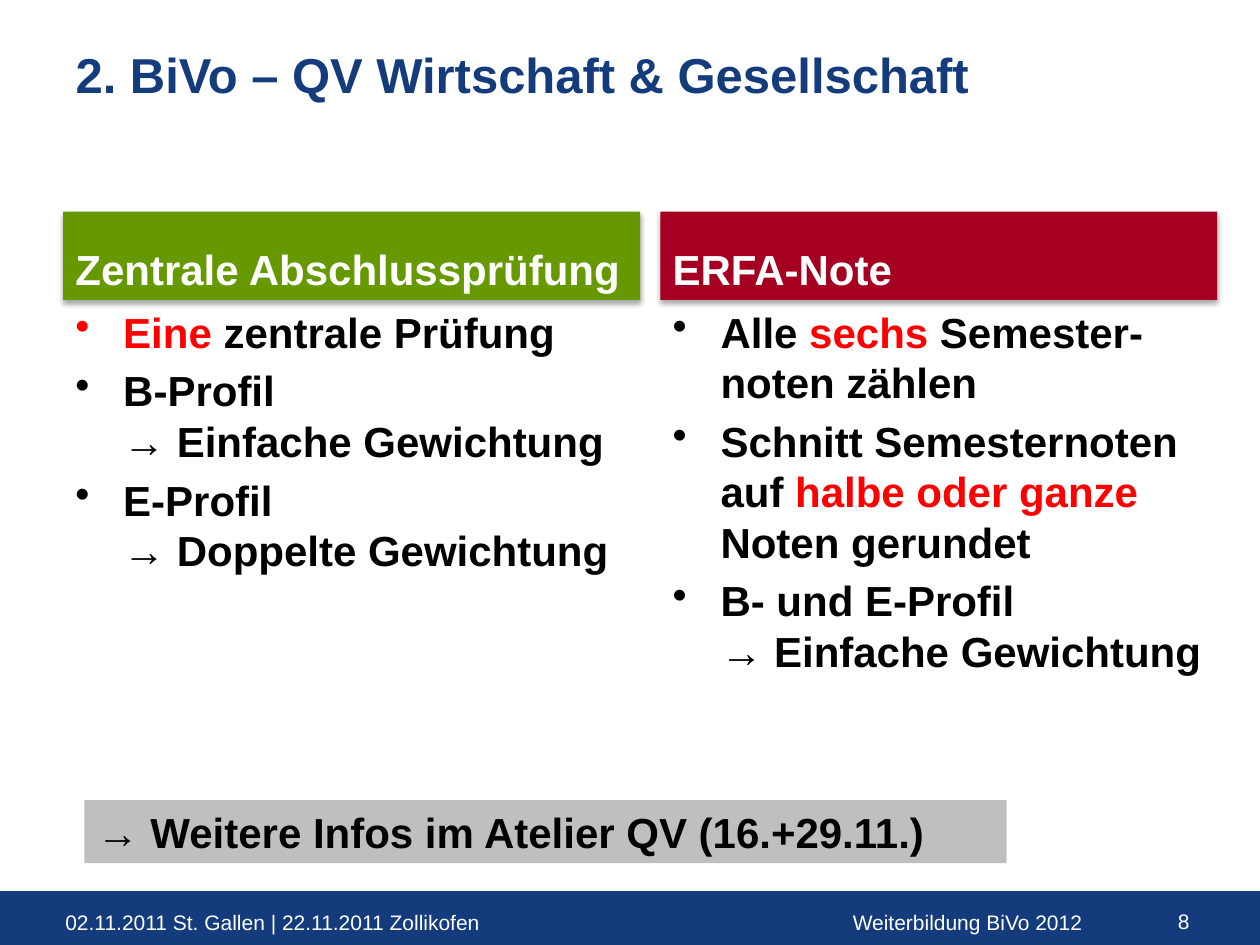
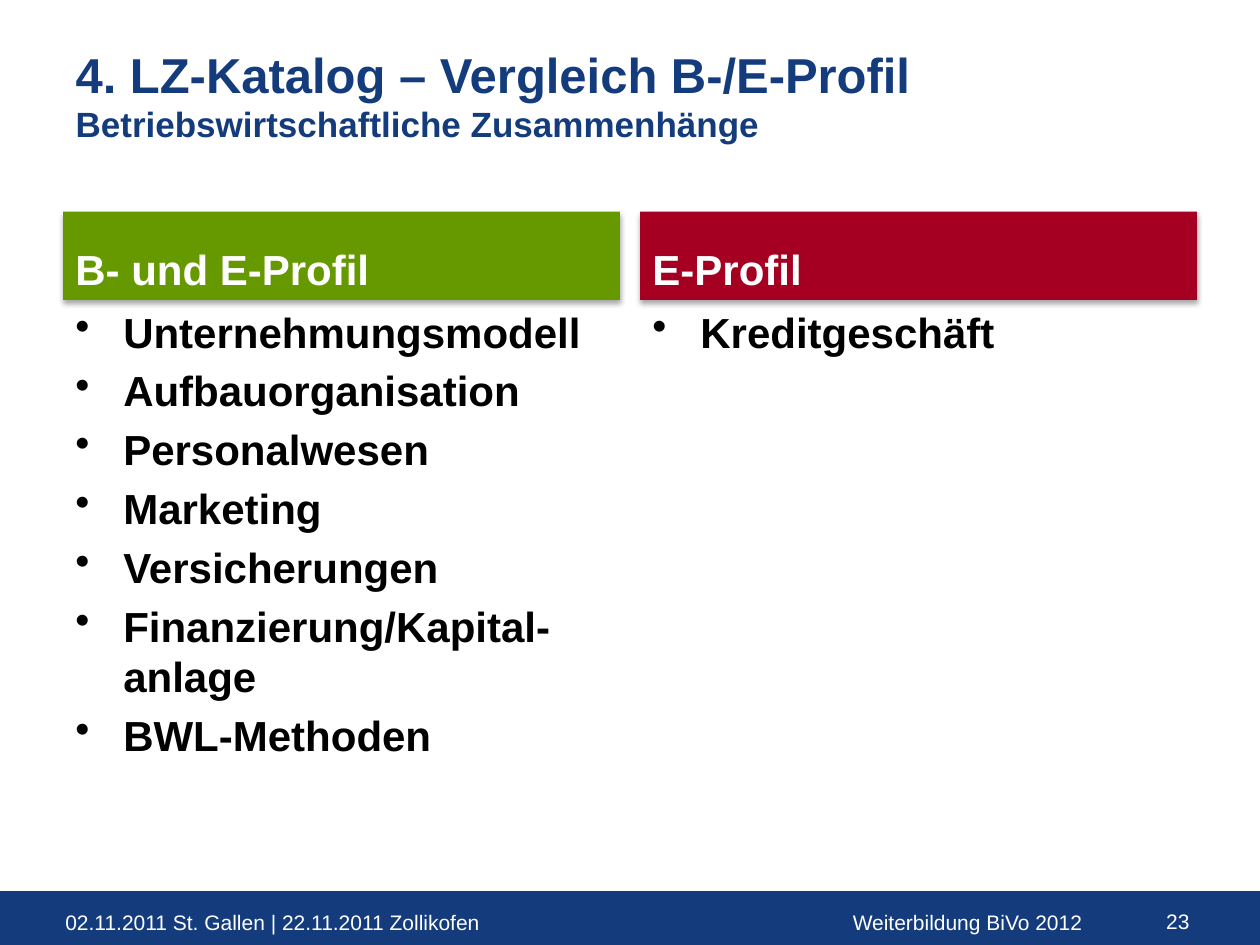
from lxml import etree
from pptx import Presentation
from pptx.dml.color import RGBColor
from pptx.enum.shapes import MSO_SHAPE
from pptx.enum.text import MSO_ANCHOR, MSO_AUTO_SIZE, PP_ALIGN
from pptx.oxml import parse_xml
from pptx.oxml.ns import nsdecls, qn
from pptx.util import Inches, Pt

NAVY = RGBColor(0x14, 0x3C, 0x7D)
GREEN = RGBColor(0x66, 0x99, 0x00)
CRIMSON = RGBColor(0xA5, 0x00, 0x21)
RED = RGBColor(0xFF, 0x00, 0x00)
GREY = RGBColor(0xBF, 0xBF, 0xBF)
WHITE = RGBColor(0xFF, 0xFF, 0xFF)
BLACK = RGBColor(0x00, 0x00, 0x00)

FONT = "Arial"
WIDTH, HEIGHT = Inches(10), Inches(7.5)
MARGIN = 0.5
HEADING_TOP, HEADING_HEIGHT = 1.68, 0.7
LIST_TOP, LIST_HEIGHT = HEADING_TOP + HEADING_HEIGHT, 4.32
INDENT = Inches(0.38)
SHADOW = (
    f'<a:effectLst {nsdecls("a")}><a:outerShdw blurRad="{Pt(3.1)}" dist="{Pt(1.8)}" '
    'dir="5400000" rotWithShape="0"><a:srgbClr val="000000"><a:alpha val="35000"/>'
    "</a:srgbClr></a:outerShdw></a:effectLst>"
)


def write(frame, text, size=24, color=BLACK, bold=True, accent=RED, accent_size=None,
          align=PP_ALIGN.LEFT, anchor=MSO_ANCHOR.TOP, bullets=False):
    frame.word_wrap = True
    frame.auto_size = MSO_AUTO_SIZE.NONE
    frame.vertical_anchor = anchor
    for number, line in enumerate(text.split("\n")):
        para = frame.add_paragraph() if number else frame.paragraphs[0]
        para.alignment = align
        if bullets:
            props = para._p.get_or_add_pPr()
            props.set("marL", str(INDENT))
            props.set("indent", str(-INDENT))
            etree.SubElement(props, qn("a:buChar")).set("char", "•")
            para.space_before = Pt(size * 0.2 if number else 0)
        for index, part in enumerate(line.split("*")):
            for row, piece in enumerate(part.split("\v")):
                if row:
                    para.add_line_break()
                if piece:
                    span = para.add_run()
                    span.text = piece
                    span.font.name = FONT
                    span.font.bold = bold
                    span.font.size = Pt(accent_size or size) if index % 2 else Pt(size)
                    span.font.color.rgb = accent if index % 2 else color


def add_box(page, left, top, width, height, fill=None):
    area = [Inches(length) for length in (left, top, width, height)]
    if fill is None:
        return page.shapes.add_textbox(*area)
    box = page.shapes.add_shape(MSO_SHAPE.RECTANGLE, *area)
    box.shadow.inherit = False
    box.fill.solid()
    box.fill.fore_color.rgb = fill
    box.line.fill.background()
    return box


slides = [
    {
        "number": "8",
        "title": "2. BiVo – QV Wirtschaft & Gesellschaft",
        "columns": [
            (MARGIN, 4.58, 4.64, GREEN, "Zentrale Abschlussprüfung",
             "*Eine* zentrale Prüfung\n"
             "B-Profil\v→ Einfache Gewichtung\n"
             "E-Profil\v→ Doppelte Gewichtung"),
            (5.24, 4.42, 4.65, CRIMSON, "ERFA-Note",
             "Alle *sechs *Semester-noten zählen\n"
             "Schnitt Semesternoten auf *halbe oder ganze *Noten gerundet\n"
             "B- und E-Profil\v→ Einfache Gewichtung"),
        ],
        "note": "→ Weitere Infos im Atelier QV (16.+29.11.)",
    },
    {
        "number": "23",
        "title": "4. LZ-Katalog – Vergleich B-/E-Profil\n*Betriebswirtschaftliche Zusammenhänge*",
        "columns": [
            (MARGIN, 4.42, 4.42, GREEN, "B- und E-Profil",
             "Unternehmungsmodell\nAufbauorganisation\nPersonalwesen\nMarketing\n"
             "Versicherungen\nFinanzierung/Kapital-anlage\nBWL-Methoden"),
            (5.08, 4.42, 4.42, CRIMSON, "E-Profil", "Kreditgeschäft"),
        ],
        "note": None,
    },
]

deck = Presentation()
deck.slide_width, deck.slide_height = WIDTH, HEIGHT

for content in slides:
    page = deck.slides.add_slide(deck.slide_layouts[5])

    band = add_box(page, -0.04, 7.08, 10.04, 0.42, NAVY)
    band.line.color.rgb = NAVY
    band.line.width = Pt(0.75)
    footers = [
        (0.42, 7.17, 4.74, "02.11.2011 St. Gallen | 22.11.2011 Zollikofen", PP_ALIGN.LEFT),
        (6.67, 7.17, 2.33, "Weiterbildung BiVo 2012", PP_ALIGN.LEFT),
        (8.96, 7.16, 0.58, content["number"], PP_ALIGN.RIGHT),
    ]
    for left, top, width, text, align in footers:
        footer = add_box(page, left, top, width, 0.33)
        write(footer.text_frame, text, size=12, color=WHITE, bold=False, align=align)

    title = page.shapes.title
    title.left, title.top = Inches(MARGIN), Inches(0.3)
    title.width, title.height = WIDTH - 2 * Inches(MARGIN), Inches(1.25)
    write(title.text_frame, content["title"], size=28, color=NAVY, accent=NAVY, accent_size=20)

    for left, heading_width, list_width, fill, heading, items in content["columns"]:
        header = add_box(page, left, HEADING_TOP, heading_width, HEADING_HEIGHT, fill)
        properties = header._element.spPr
        properties.replace(properties.find(qn("a:effectLst")), parse_xml(SHADOW))
        write(header.text_frame, heading, color=WHITE, anchor=MSO_ANCHOR.BOTTOM)
        points = add_box(page, left, LIST_TOP, list_width, LIST_HEIGHT)
        write(points.text_frame, items, bullets=True)

    if content["note"]:
        note = add_box(page, 0.67, 6.35, 7.32, 0.5, GREY)
        write(note.text_frame, content["note"])

deck.save("out.pptx")
